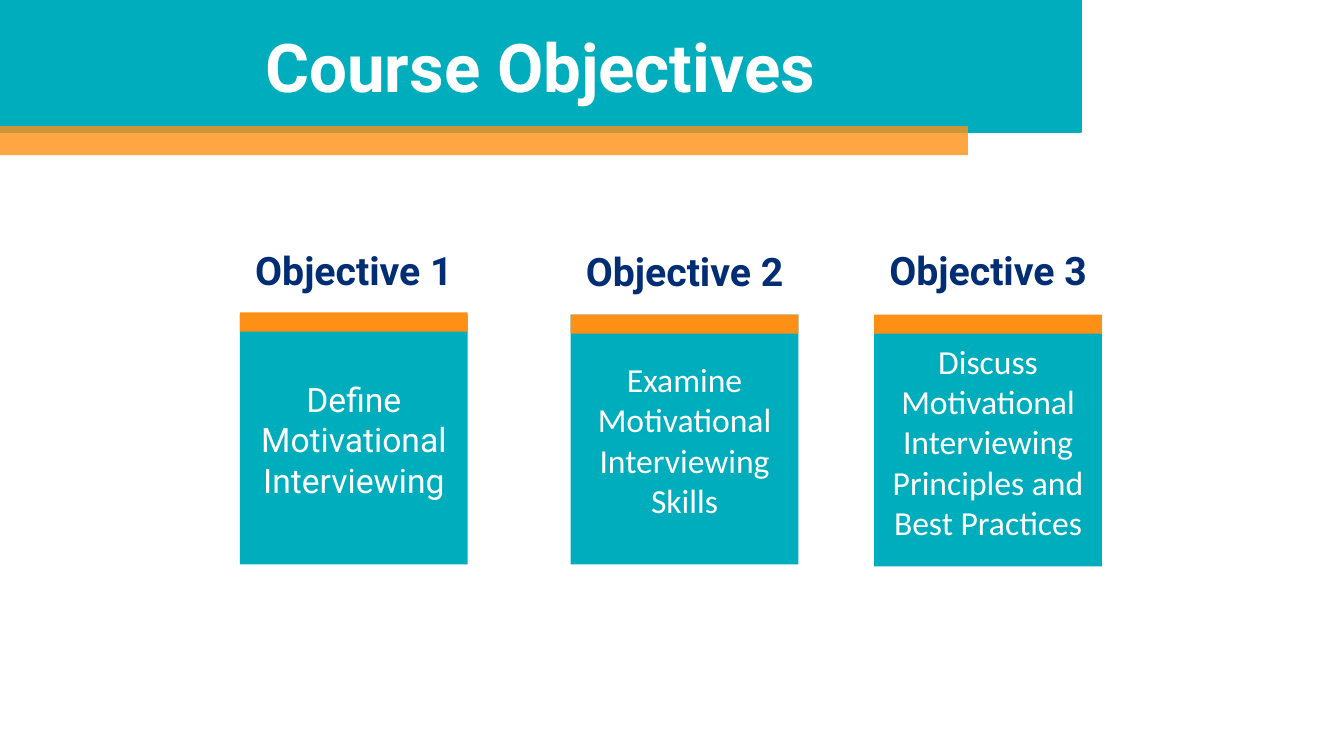
from pptx import Presentation
from pptx.dml.color import RGBColor
from pptx.enum.shapes import MSO_SHAPE
from pptx.enum.text import MSO_ANCHOR, MSO_AUTO_SIZE, PP_ALIGN
from pptx.oxml.ns import qn
from pptx.util import Inches, Pt
from lxml import etree

RECTANGLE = MSO_SHAPE.RECTANGLE
MIDDLE = MSO_ANCHOR.MIDDLE
CENTER = PP_ALIGN.CENTER
GROW = MSO_AUTO_SIZE.SHAPE_TO_FIT_TEXT

# Content
TITLE = "Course Objectives"
# heading, text, font, left, card top, strip top, heading top
OBJECTIVES = [
    ("Objective 1", "Define Motivational Interviewing", "Roboto", 2.38, 3.12, 3.10, 2.16),
    ("Objective 2", "Examine Motivational Interviewing Skills", "Calibri", 5.66, 3.12, 3.12, 2.17),
    ("Objective 3", "Discuss Motivational Interviewing Principles and Best Practices",
     "Calibri", 8.67, 3.14, 3.12, 2.16),
]

# Style
TEAL, ORANGE, NAVY, WHITE = "00ADBC", "FF9016", "002D73", "FFFFFF"
CARD_WIDTH, CARD_HEIGHT, STRIP_HEIGHT = 2.26, 2.48, 0.19
HEADING_WIDTH, HEADING_HEIGHT = 3.82, 0.81


def color(hex_text):
    return RGBColor.from_string(hex_text)


def add_rectangle(slide, left, top, width, height, fill):
    shape = slide.shapes.add_shape(
        RECTANGLE, Inches(left), Inches(top), Inches(width), Inches(height))
    shape.shadow.inherit = False
    shape.fill.solid()
    shape.fill.fore_color.rgb = color(fill)
    shape.line.fill.background()
    return shape


def write(shape, text, size, font, hex_text, bold=False):
    frame = shape.text_frame
    frame.word_wrap = True
    frame.text = text
    paragraph = frame.paragraphs[0]
    paragraph.alignment = CENTER
    run_font = paragraph.runs[0].font
    run_font.name = font
    run_font.size = Pt(size)
    run_font.bold = bold
    run_font.color.rgb = color(hex_text)
    return frame


presentation = Presentation()
presentation.slide_width = Inches(13.33)
presentation.slide_height = Inches(7.5)
slide = presentation.slides.add_slide(presentation.slide_layouts[6])

# Objective cards with orange strips and centred headings
for heading, text, font, left, card_top, strip_top, heading_top in OBJECTIVES:
    card = add_rectangle(slide, left, card_top, CARD_WIDTH, CARD_HEIGHT, TEAL)
    write(card, text, 24, font, WHITE).vertical_anchor = MIDDLE
    add_rectangle(slide, left, strip_top, CARD_WIDTH, STRIP_HEIGHT, ORANGE)

    heading_left = left + (CARD_WIDTH - HEADING_WIDTH) / 2
    box = slide.shapes.add_textbox(
        Inches(heading_left), Inches(heading_top),
        Inches(HEADING_WIDTH), Inches(HEADING_HEIGHT))
    frame = write(box, heading, 28, "Roboto", NAVY, bold=True)
    frame.auto_size = GROW
    frame.paragraphs[0].line_spacing = 1.5

# Title banner
banner = add_rectangle(slide, 0, 0, 10.72, 1.31, TEAL)
banner.line.color.rgb = color(TEAL)
banner.line.width = Pt(1)
write(banner, TITLE, 48, "Roboto", WHITE, bold=True).vertical_anchor = MIDDLE

# Translucent stripe overlapping the banner
stripe = add_rectangle(slide, 0, 1.25, 9.6, 0.29, ORANGE)
stripe_color = stripe.fill._xPr.find(qn("a:solidFill")).find(qn("a:srgbClr"))
etree.SubElement(stripe_color, qn("a:alpha")).set("val", "80000")

presentation.save("out.pptx")
